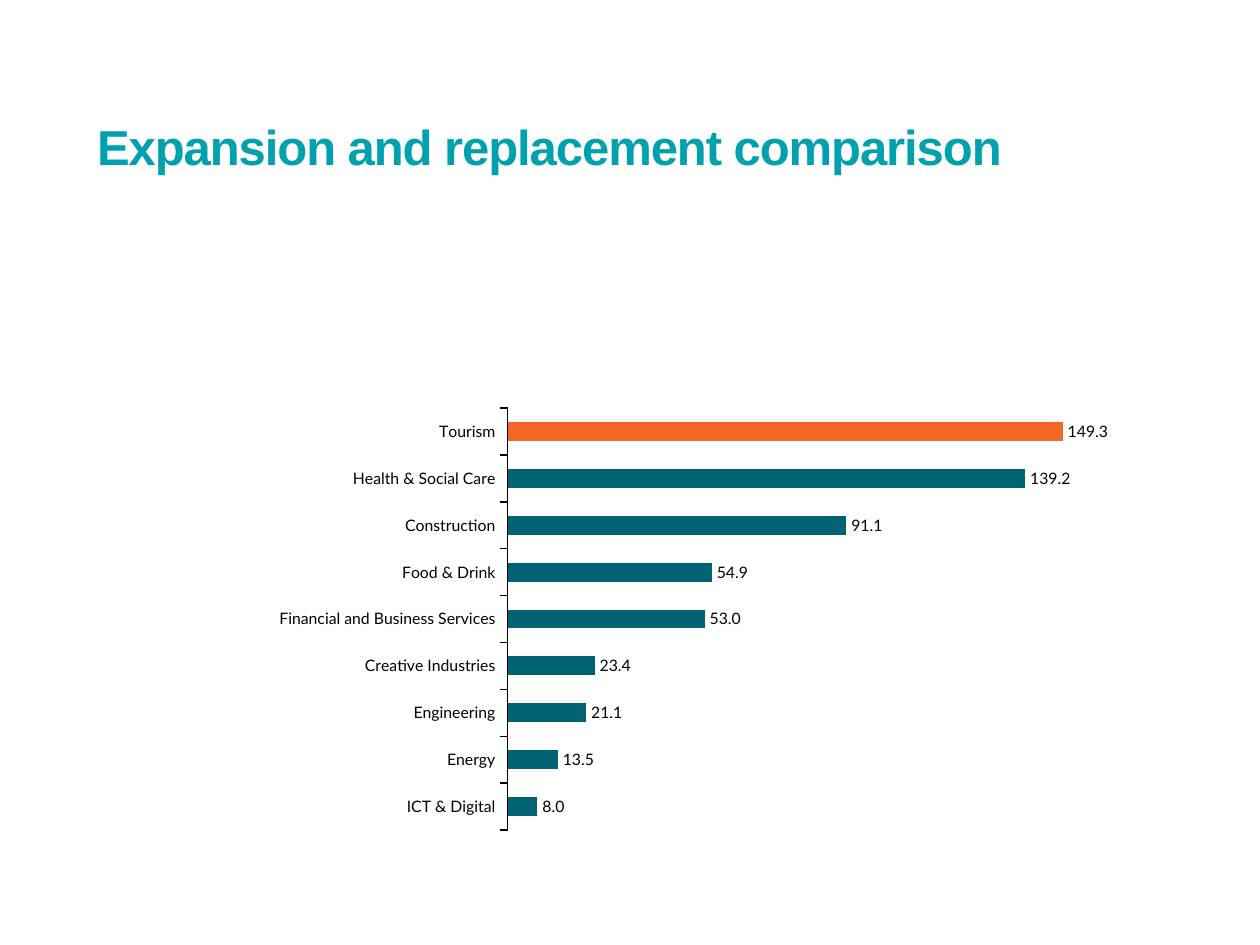
from lxml import etree
from pptx import Presentation
from pptx.chart.data import CategoryChartData as ChartData
from pptx.dml.color import RGBColor as Color
from pptx.enum.chart import XL_CHART_TYPE as ChartType
from pptx.enum.chart import XL_LABEL_POSITION as LabelPosition
from pptx.enum.chart import XL_TICK_MARK as TickMark
from pptx.enum.text import MSO_ANCHOR as Anchor
from pptx.enum.text import MSO_AUTO_SIZE as AutoSize
from pptx.enum.text import PP_ALIGN as Align
from pptx.oxml import parse_xml
from pptx.oxml.ns import nsdecls, qn
from pptx.util import Inches, Pt

WIDTH, HEIGHT = Inches(10), Inches(7.5)
COLORS = {"title": "00A1AF", "bar": "006373", "highlight": "F26724", "ink": "000000"}
SECTORS = {
    "ICT & Digital": 8.0,
    "Energy": 13.5,
    "Engineering": 21.1,
    "Creative Industries": 23.4,
    "Financial and Business Services": 53.0,
    "Food & Drink": 54.9,
    "Construction": 91.1,
    "Health & Social Care": 139.2,
    "Tourism": 149.3,
}
PLOT = {"x": 0.399, "y": 0.019, "w": 0.571, "h": 0.948}


def color(name):
    return Color.from_string(COLORS[name])


def apply(target, values):
    for name, value in values.items():
        setattr(target, name, value)


def share(left, top, width, height):
    return [int(part) for part in (left * WIDTH, top * HEIGHT, width * WIDTH, height * HEIGHT)]


def fill_solid(part, name):
    part.format.fill.solid()
    part.format.fill.fore_color.rgb = color(name)


def place_title(page, box, text):
    title = page.shapes.title
    apply(title, dict(zip(("left", "top", "width", "height"), box)))
    frame = title.text_frame
    apply(frame, {
        "margin_left": 0, "margin_top": 0, "margin_right": 0, "margin_bottom": 0,
        "word_wrap": True, "auto_size": AutoSize.NONE, "vertical_anchor": Anchor.BOTTOM,
    })
    para = frame.paragraphs[0]
    apply(para, {"alignment": Align.LEFT, "line_spacing": Pt(68)})
    span = para.add_run()
    span.text = text
    apply(span.font, {"name": "Arial", "size": Pt(28), "bold": True})
    span.font.color.rgb = color("title")
    span.font._element.set("spc", "-60")


def fix_plot_area(chart):
    area = chart._chartSpace.chart.plotArea
    for old in area.findall(qn("c:layout")):
        area.remove(old)
    layout = parse_xml(f"<c:layout {nsdecls('c')}/>")
    manual = etree.SubElement(layout, qn("c:manualLayout"))
    settings = {"layoutTarget": "inner", "xMode": "edge", "yMode": "edge", **PLOT}
    for name, value in settings.items():
        etree.SubElement(manual, qn(f"c:{name}")).set("val", str(value))
    area.insert(0, layout)


def place_chart(page, box, sectors):
    data = ChartData(number_format="0.0")
    data.categories = list(sectors)
    data.add_series("Series 1", list(sectors.values()))
    chart = page.shapes.add_chart(ChartType.BAR_CLUSTERED, *box, data).chart
    apply(chart, {"has_legend": False, "has_title": False})
    apply(chart.font, {"name": "Lato", "size": Pt(9)})
    chart.font.color.rgb = color("ink")
    apply(chart.value_axis, {
        "visible": False, "has_major_gridlines": False,
        "minimum_scale": 0, "maximum_scale": 160,
    })
    axis = chart.category_axis
    apply(axis, {"major_tick_mark": TickMark.OUTSIDE, "minor_tick_mark": TickMark.NONE})
    axis.format.line.width = Pt(0.75)
    axis.format.line.color.rgb = color("ink")
    plot = chart.plots[0]
    apply(plot, {"gap_width": 150, "vary_by_categories": False, "has_data_labels": True})
    apply(plot.data_labels, {
        "show_value": True, "number_format": "0.0", "number_format_is_linked": False,
        "position": LabelPosition.OUTSIDE_END,
    })
    series = plot.series[0]
    fill_solid(series, "bar")
    fill_solid(series.points[list(sectors).index("Tourism")], "highlight")
    fix_plot_area(chart)


def main():
    deck = Presentation()
    apply(deck, {"slide_width": WIDTH, "slide_height": HEIGHT})
    page = deck.slides.add_slide(deck.slide_layouts.get_by_name("Title Only"))
    place_title(page, share(0.077, 0.019, 0.822, 0.167), "Expansion and replacement comparison")
    place_chart(page, share(0.073, 0.423, 0.827, 0.471), SECTORS)
    deck.save("out.pptx")


if __name__ == "__main__":
    main()
